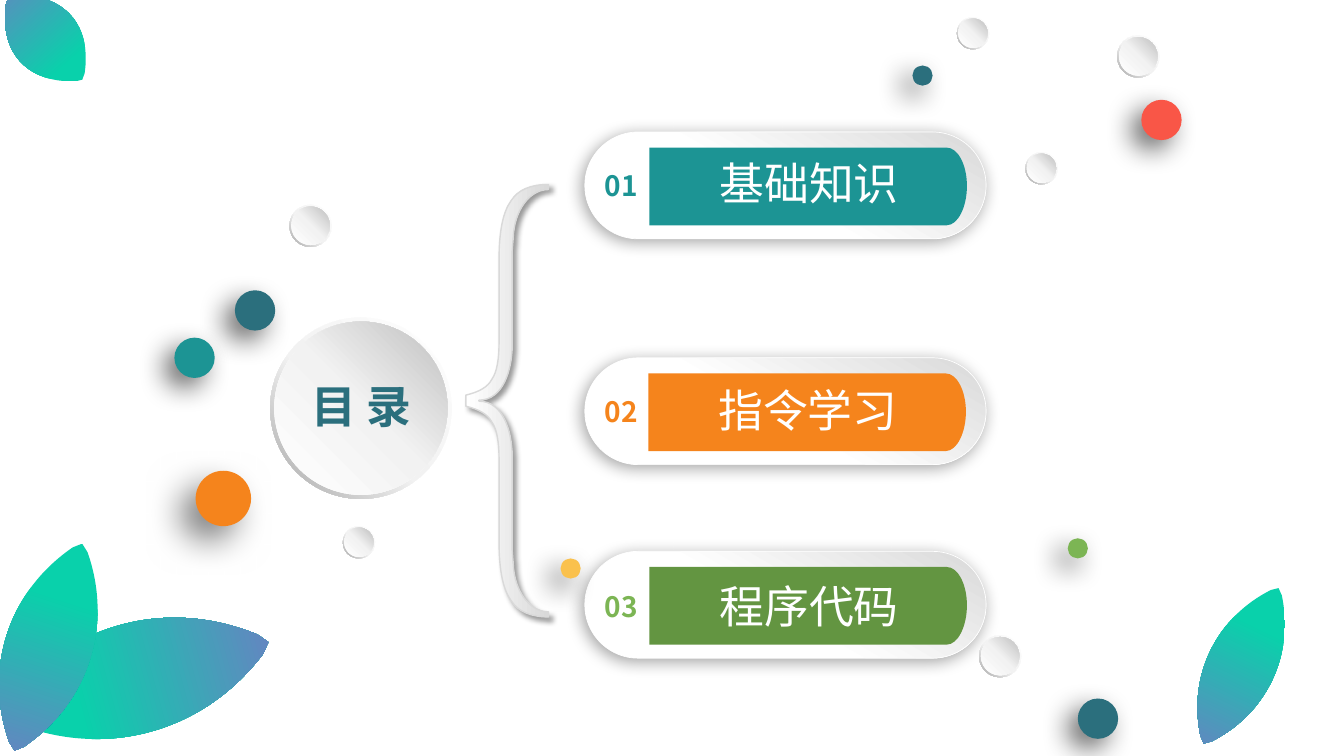
from dataclasses import dataclass

from pptx import Presentation
from pptx.dml.color import RGBColor
from pptx.enum.shapes import MSO_SHAPE
from pptx.enum.text import MSO_ANCHOR, MSO_AUTO_SIZE, PP_ALIGN
from pptx.oxml import parse_xml
from pptx.oxml.ns import nsdecls, qn
from pptx.util import Cm, Pt


@dataclass(frozen=True)
class Theme:
    font: str = "Noto Sans CJK SC"
    white: str = "FFFFFF"
    silver: str = "D9D9D9"
    teal: str = "1C9494"
    navy: str = "2B6F7D"
    orange: str = "F5841C"
    moss: str = "639541"
    green: str = "7CB554"
    red: str = "F95647"
    yellow: str = "FAC14D"
    heading_size: int = 32
    number_size: int = 20
    # Gradient stops: (percent, colour)
    pill: tuple = ((45, "FFFFFF"), (100, "D9D9D9"))
    brace: tuple = ((0, "FFFFFF"), (100, "D9D9D9"))
    rim: tuple = ((0, "FFFFFF"), (55, "F2F2F2"), (100, "A6A6A6"))
    disc: tuple = ((0, "FFFFFF"), (51, "F2F2F2"), (100, "BFBFBF"))
    leaf: tuple = ((0, "09D1AB"), (31, "09D1AB"), (100, "6E7DC3"))


THEME = Theme()

# Shadows: opacity percent, blur, distance (points), direction (degrees)
PILL_SHADOW = (34, 12, 3, 135)
BRACE_SHADOW = (40, 4, 3, 45)
DOT_SHADOW = (60, 20, 10, 135)
BIG_DOT_SHADOW = (50, 25, 15, 135)

# Outlines in inches: one point makes a corner, three points a Bezier curve
LABEL_OUTLINE = [[(0, 0)], [(2.95, 0)], [(3.06, 0), (3.15, 0.17), (3.15, 0.38)],
                 [(3.15, 0.59), (3.06, 0.77), (2.95, 0.77)], [(0, 0.77)]]
LEAF_HALF = [[(0.5, 0)], [(0.41, 0.03)], [(0.16, 0.16), (0, 0.32), (0, 0.5)],
             [(0, 0.68), (0.16, 0.84), (0.41, 0.97)], [(0.5, 1)]]
BRACE_HALF = [[(4.62, 3.92)], [(4.75, 3.89), (4.84, 3.84), (4.88, 3.76)],
              [(4.93, 3.69), (4.95, 3.56), (4.95, 3.38)], [(4.95, 2.57)],
              [(4.95, 2.29), (4.99, 2.1), (5.07, 1.99)],
              [(5.14, 1.88), (5.27, 1.83), (5.44, 1.83)], [(5.44, 1.88)],
              [(5.25, 1.88), (5.1, 2.09), (5.09, 2.36)], [(5.08, 2.49)], [(5.08, 3.42)],
              [(5.08, 3.67), (4.99, 3.97), (4.75, 3.97)]]
BRACE_HEIGHTS = 7.95  # sum of the heights of two mirrored points

# Top of pill, number, title, number colour, label colour, label and text shifts
SECTIONS = [(1.31, "01", "基础知识", THEME.teal, THEME.teal, 0, 0.31, 0.19),
            (3.55, "02", "指令学习", THEME.orange, THEME.orange, -0.01, 0.31, 0.2),
            (5.47, "03", "程序代码", THEME.green, THEME.moss, 0, 0.33, 0.22)]
# Left, top, width, height, rotation, gradient direction
LEAVES = [(0.79, 5.36, 1.1, 2.74, 74.8, 270), (0.05, 5.34, 0.86, 2.16, 18.1, 90),
          (11.97, 5.75, 0.68, 1.71, 25.7, 90), (0.11, -0.17, 0.68, 1.1, 138.3, 90)]
BEADS = [(9.49, 0.17, 0.32), (11.08, 0.35, 0.42), (3.4, 5.22, 0.32),
         (10.17, 1.51, 0.32), (9.71, 6.3, 0.42), (2.87, 2.03, 0.42)]
DOTS = [(11.32, 0.99, 0.4, THEME.red), (9.05, 0.65, 0.2, THEME.navy),
        (2.33, 2.88, 0.4, THEME.navy), (5.56, 5.54, 0.2, THEME.yellow),
        (10.69, 6.93, 0.4, THEME.navy), (1.73, 3.35, 0.4, THEME.teal),
        (10.59, 5.34, 0.2, THEME.green)]


def length(inches):
    return Cm(inches * 2.54)


def apply(target, values):
    for name, value in values.items():
        setattr(target, name, value)


def transform(outline, move):
    return [[move(x, y) for x, y in part] for part in outline]


def backwards(outline):
    """Give the same corners and curves, drawn from the end to the start."""
    result = [outline[-1][-1:]]
    for before, part in zip(outline[-2::-1], outline[::-1]):
        result.append(part[-2::-1] + before[-1:])
    return result


def paint(shape, fill, angle=0, line=None, shadow=None):
    """Fill with one colour or with gradient stops; line is (colour, points)."""
    if isinstance(fill, str):
        shape.fill.solid()
        shape.fill.fore_color.rgb = RGBColor.from_string(fill)
    else:
        shape.fill.gradient()
        stops = "".join(f'<a:gs pos="{at * 1000}"><a:srgbClr val="{colour}"/></a:gs>'
                        for at, colour in fill)
        properties = shape.element.spPr
        properties.replace(properties.find(qn("a:gradFill")), parse_xml(
            f'<a:gradFill {nsdecls("a")} rotWithShape="1"><a:gsLst>{stops}</a:gsLst>'
            f'<a:lin ang="{angle * 60000}" scaled="0"/></a:gradFill>'))
    if line:
        shape.line.color.rgb = RGBColor.from_string(line[0])
        shape.line.width = Pt(line[1])
    else:
        shape.line.fill.background()
    shape.shadow.inherit = False
    if shadow:
        opacity, blur, distance, direction = shadow
        shape.element.spPr.find(qn("a:effectLst")).append(parse_xml(
            f'<a:outerShdw {nsdecls("a")} blurRad="{Pt(blur)}" dist="{Pt(distance)}" '
            f'dir="{direction * 60000}" algn="ctr" rotWithShape="0"><a:srgbClr val="000000">'
            f'<a:alpha val="{opacity * 1000}"/></a:srgbClr></a:outerShdw>'))


def add_preset(shapes, kind, left, top, width, height, adjustment=None, **look):
    shape = shapes.add_shape(kind, *map(length, (left, top, width, height)))
    if adjustment is not None:
        shape.adjustments[0] = adjustment
    paint(shape, **look)


def add_outline(shapes, outline, rotation=0, **look):
    """Draw a closed freeform, then bend its curved sides."""
    parts = transform(outline, lambda x, y: (length(x), length(y)))
    corners = [part[-1] for part in parts]
    builder = shapes.build_freeform(*corners[0])
    builder.add_line_segments(corners[1:], close=True)
    shape = builder.convert_to_shape()
    left, top = (min(values) for values in zip(*corners))
    sides = list(shape.element.spPr.iter(qn("a:lnTo")))
    for side, part in zip(sides, parts[1:]):
        if len(part) == 3:
            points = "".join(f'<a:pt x="{x - left}" y="{y - top}"/>' for x, y in part)
            side.getparent().replace(side, parse_xml(
                f'<a:cubicBezTo {nsdecls("a")}>{points}</a:cubicBezTo>'))
    shape.rotation = rotation
    paint(shape, **look)


def write(box, text, size, colour, bold=False, **frame_values):
    apply(box.text_frame, frame_values)
    para = box.text_frame.paragraphs[0]
    para.alignment = PP_ALIGN.CENTER
    span = para.add_run()
    span.text = text
    apply(span.font, {"name": THEME.font, "size": Pt(size), "bold": bold})
    span.font.color.rgb = RGBColor.from_string(colour)
    span.font._element.append(parse_xml(
        f'<a:ea {nsdecls("a")} typeface="{THEME.font}"/>'))


def add_text(shapes, left, top, width, height, *content, **values):
    box = shapes.add_textbox(*map(length, (left, top, width, height)))
    write(box, *content, **values)


def add_section(page, top, number, title, number_colour, label_colour,
                shift, number_drop, title_drop):
    shapes = page.shapes.add_group_shape().shapes
    add_preset(shapes, MSO_SHAPE.ROUNDED_RECTANGLE, 5.8, top, 3.98, 1.06, 0.5,
               fill=THEME.pill, angle=300, line=(THEME.white, 0.5), shadow=PILL_SHADOW)
    label = transform(LABEL_OUTLINE, lambda x, y: (6.44 + shift + x, top + 0.155 + y))
    add_outline(shapes, label, fill=label_colour)
    add_text(shapes, 5.89, top + number_drop, 0.54, 0.44, number,
             THEME.number_size, number_colour, True, word_wrap=False)
    add_text(shapes, 6.92 + shift, top + title_drop, 2.21, 0.64, title,
             THEME.heading_size, THEME.white, word_wrap=True)


def add_bead(page, left, top, size, ratio=0.91):
    """Add a silver disc inside a rim; ratio is disc to rim."""
    shapes = page.shapes.add_group_shape().shapes
    add_preset(shapes, MSO_SHAPE.DONUT, left, top, size, size, 0.049,
               fill=THEME.rim, angle=135)
    gap = size * (1 - ratio) / 2
    add_preset(shapes, MSO_SHAPE.OVAL, left + gap, top + gap, size * ratio, size * ratio,
               fill=THEME.disc, angle=315)


def add_dot(page, left, top, size, colour, shadow=DOT_SHADOW):
    add_preset(page.shapes, MSO_SHAPE.OVAL, left, top, size, size,
               fill=colour, shadow=shadow)


def add_brace(page):
    lower = transform(backwards(BRACE_HALF), lambda x, y: (x, BRACE_HEIGHTS - y))
    add_outline(page.shapes, BRACE_HALF + lower, fill=THEME.brace,
                line=(THEME.silver, 1), shadow=BRACE_SHADOW)


def add_leaf(page, left, top, width, height, rotation, angle):
    right_half = transform(backwards(LEAF_HALF), lambda x, y: (1 - x, y))
    leaf = transform(LEAF_HALF + right_half[1:],
                     lambda x, y: (left + x * width, top + y * height))
    add_outline(page.shapes, leaf, rotation, fill=THEME.leaf, angle=angle)


def place_title(page):
    """Put the title on top of the big bead."""
    title = page.shapes.title
    apply(title, {"left": length(2.8), "top": length(3.76),
                  "width": length(1.57), "height": length(0.54)})
    write(title, "目 录", THEME.heading_size, THEME.navy, True,
          margin_left=0, margin_right=0, margin_top=0, margin_bottom=0,
          vertical_anchor=MSO_ANCHOR.TOP, auto_size=MSO_AUTO_SIZE.NONE)
    title.element.getparent().append(title.element)


def main():
    deck = Presentation()
    apply(deck, {"slide_width": length(13.33), "slide_height": length(7.5)})
    page = deck.slides.add_slide(deck.slide_layouts[5])
    add_bead(page, 2.68, 3.15, 1.8, 0.955)
    place_title(page)
    add_brace(page)
    for section in SECTIONS:
        add_section(page, *section)
    for leaf in LEAVES:
        add_leaf(page, *leaf)
    for dot in DOTS:
        add_dot(page, *dot)
    add_dot(page, 1.94, 4.67, 0.55, THEME.orange, BIG_DOT_SHADOW)
    for bead in BEADS:
        add_bead(page, *bead)
    deck.save("out.pptx")


if __name__ == "__main__":
    main()
